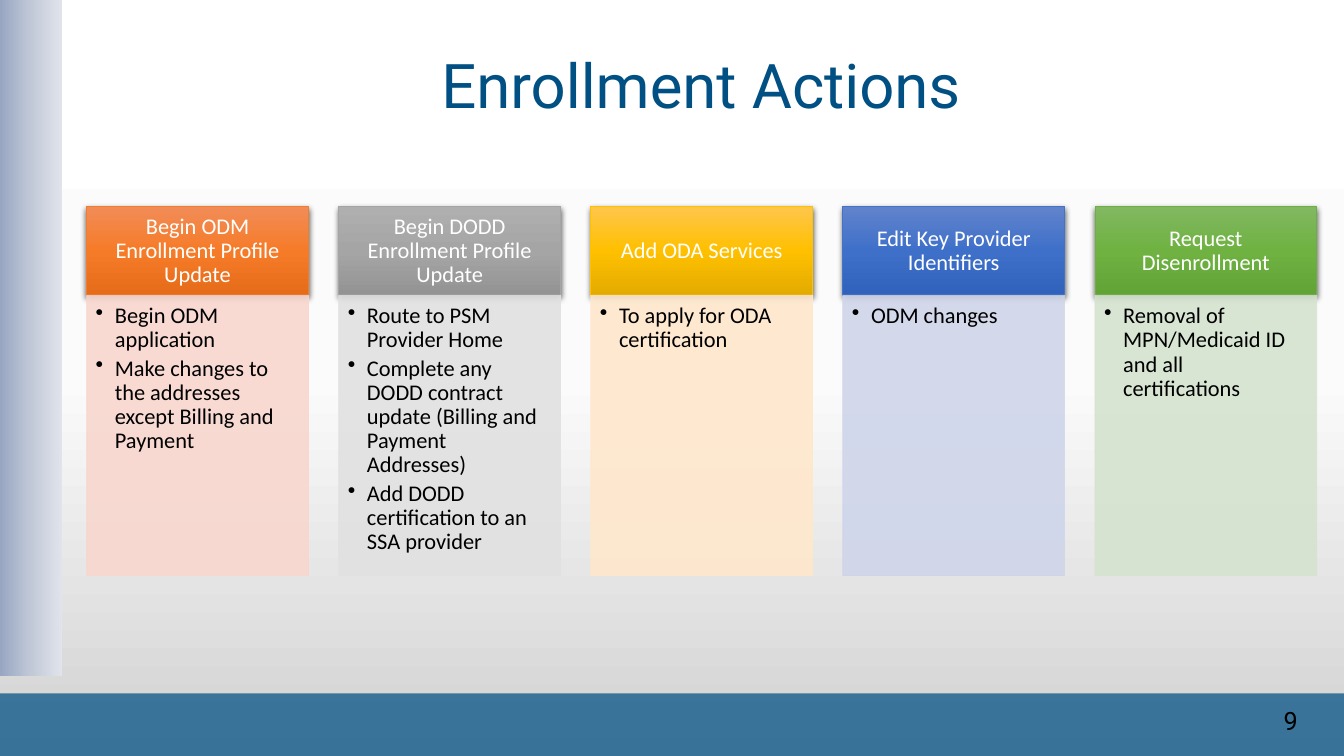
from lxml.etree import SubElement
from pptx import Presentation
from pptx.dml.color import RGBColor as RGB
from pptx.enum.shapes import MSO_SHAPE as SHAPE
from pptx.enum.text import MSO_ANCHOR as ANCHOR, MSO_AUTO_SIZE as AUTO, PP_ALIGN as ALIGN
from pptx.oxml.ns import qn
from pptx.util import Pt

PX = 9144  # 100 px to the inch
THEME = {
    "heading_font": "Roboto", "body_font": "Calibri",
    "title_size": 44, "number_size": 18, "card_size": 16,
    "blue": "015084", "black": "000000", "white": "FFFFFF",
    "backdrop": ("FFFFFF", "FBFBFB", "D1D1D1"),
    "rail": ("98A6C2", "C1C9D8", "E1E4EB"),
    # header gradient, header line, body
    "cards": [
        (("F18C57", "F67B28", "E56C19"), "ED7D31", "F8D7CE"),
        (("AFAFAF", "A5A5A5", "939393"), "A5A5A5", "E1E1E1"),
        (("FFC64B", "FFC000", "E3AB00"), "FFC000", "FFE8CC"),
        (("6183CB", "3E70CA", "3062BB"), "4472C4", "CFD5EA"),
        (("81B861", "6FB242", "62A336"), "70AD47", "D5E3CF"),
    ],
}
ACTIONS = [
    ("Begin ODM Enrollment Profile Update",
     ["Begin ODM application",
      "Make changes to the addresses except Billing and Payment"]),
    ("Begin DODD Enrollment Profile Update",
     ["Route to PSM Provider Home",
      "Complete any DODD contract update (Billing and Payment Addresses)",
      "Add DODD certification to an SSA provider"]),
    ("Add ODA Services", ["To apply for ODA certification"]),
    ("Edit Key Provider Identifiers", ["ODM changes"]),
    ("Request Disenrollment", ["Removal of MPN/Medicaid ID and all certifications"]),
]
CARD_LEFT, CARD_PITCH, CARD_WIDTH = 86, 250, 220
HEADER_TOP, HEADER_HEIGHT, BODY_HEIGHT = 205, 88, 278


def write_text(frame, lines, font, size, color, align=ALIGN.LEFT, anchor=ANCHOR.TOP,
               insets=(10, 5, 10, 5), spacing=0.9, after=0, bullet_indent=0):
    frame.word_wrap = True
    frame.auto_size = AUTO.NONE
    frame.vertical_anchor = anchor
    (frame.margin_left, frame.margin_top,
     frame.margin_right, frame.margin_bottom) = [inset * PX for inset in insets]
    for index, line in enumerate(lines):
        paragraph = frame.add_paragraph() if index else frame.paragraphs[0]
        paragraph.text = line
        paragraph.alignment = align
        paragraph.line_spacing = spacing
        paragraph.space_after = Pt(after)
        if bullet_indent:
            properties = paragraph._p.get_or_add_pPr()
            properties.set("marL", str(bullet_indent * PX))
            properties.set("indent", str(-bullet_indent * PX))
            SubElement(properties, qn("a:buChar"), char="•")
        paragraph.font.name = font
        paragraph.font.size = Pt(size)
        paragraph.font.color.rgb = RGB.from_string(color)


def paint_gradient(fill, element, colors, angle):
    """Spread the colors evenly; the angle runs counter-clockwise."""
    fill.gradient()
    fill.gradient_angle = angle
    stops = next(element.iter(qn("a:gsLst")))
    stops.clear()
    for index, color in enumerate(colors):
        position = 100000 * index // (len(colors) - 1)
        stop = SubElement(stops, qn("a:gs"), pos=str(position))
        SubElement(stop, qn("a:srgbClr"), val=color)


deck = Presentation()
deck.slide_width, deck.slide_height = 1333 * PX, 750 * PX
slide = deck.slides.add_slide(deck.slide_layouts[5])
paint_gradient(slide.background.fill, slide._element, THEME["backdrop"], 270)

rail = slide.shapes.add_shape(SHAPE.RECTANGLE, 0, 0, 62 * PX, 671 * PX)
rail.shadow.inherit = False
rail.line.fill.background()
paint_gradient(rail.fill, rail._element, THEME["rail"], 0)

footer = slide.shapes.add_shape(SHAPE.RECTANGLE, 0, 688 * PX, 1333 * PX, 62 * PX)
footer.shadow.inherit = False
footer.line.fill.background()
footer.fill.solid()
footer.fill.fore_color.rgb = RGB.from_string(THEME["blue"])
translucent = [(footer, 73)]

page_number = slide.shapes.add_textbox(1199 * PX, 695 * PX, 98 * PX, 40 * PX)
write_text(page_number.text_frame, ["9"], THEME["heading_font"], THEME["number_size"],
           THEME["black"], align=ALIGN.RIGHT, spacing=1.0)

title = slide.shapes.title
title.left, title.top, title.width, title.height = 60 * PX, 33 * PX, 1271 * PX, 110 * PX
write_text(title.text_frame, ["Enrollment Actions"], THEME["heading_font"],
           THEME["title_size"], THEME["blue"], align=ALIGN.CENTER, anchor=ANCHOR.MIDDLE)

for column, ((heading, points), (header_colors, header_line, body_color)) in enumerate(
        zip(ACTIONS, THEME["cards"])):
    left = (CARD_LEFT + column * CARD_PITCH) * PX
    header = slide.shapes.add_shape(SHAPE.RECTANGLE, left, HEADER_TOP * PX,
                                    CARD_WIDTH * PX, HEADER_HEIGHT * PX)
    paint_gradient(header.fill, header._element, header_colors, 270)
    header.shadow.inherit = False
    effects = header._element.spPr.find(qn("a:effectLst"))
    shadow = SubElement(effects, qn("a:outerShdw"), blurRad=str(Pt(4.5)),
                        dist=str(Pt(1.5)), dir="5400000", algn="ctr", rotWithShape="0")
    shadow_color = SubElement(shadow, qn("a:srgbClr"), val=THEME["black"])
    SubElement(shadow_color, qn("a:alpha"), val="63000")
    write_text(header.text_frame, [heading], THEME["body_font"], THEME["card_size"],
               THEME["white"], align=ALIGN.CENTER, anchor=ANCHOR.MIDDLE,
               insets=(12, 7, 12, 7))

    body = slide.shapes.add_shape(SHAPE.RECTANGLE, left, (HEADER_TOP + HEADER_HEIGHT) * PX,
                                  CARD_WIDTH * PX, BODY_HEIGHT * PX)
    body.shadow.inherit = False
    body.fill.solid()
    body.fill.fore_color.rgb = RGB.from_string(body_color)
    write_text(body.text_frame, points, THEME["body_font"], THEME["card_size"],
               THEME["black"], insets=(9, 9, 12, 14), after=3, bullet_indent=19)

    for panel, line_color in ((header, header_line), (body, body_color)):
        panel.line.color.rgb = RGB.from_string(line_color)
        panel.line.width = Pt(0.5)
    translucent.append((body, 90))

for panel, opacity in translucent:
    for color in panel._element.spPr.iter(qn("a:srgbClr")):
        SubElement(color, qn("a:alpha"), val=str(opacity * 1000))

deck.save("out.pptx")
